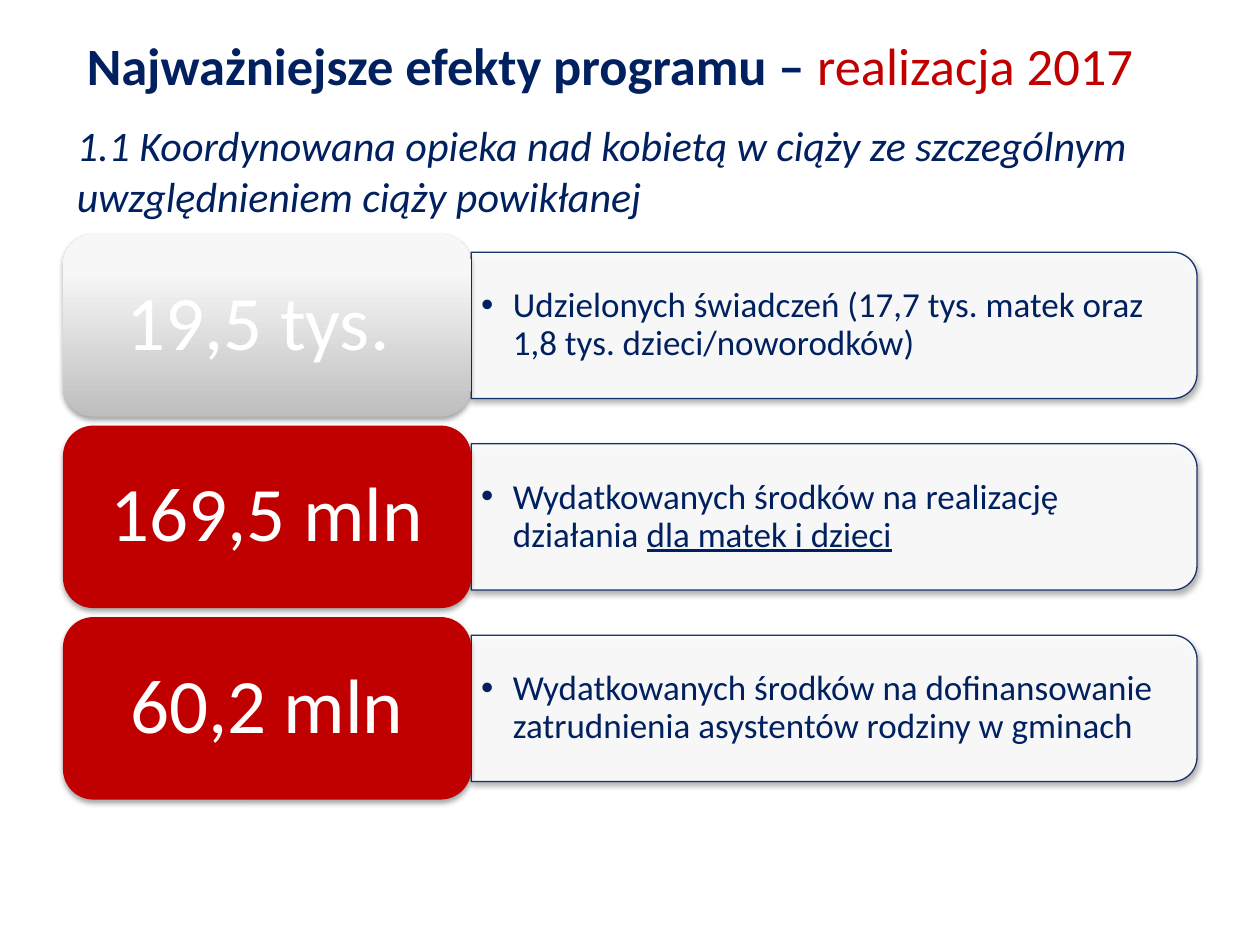
from lxml import etree
from pptx import Presentation
from pptx.dml.color import RGBColor
from pptx.enum.shapes import MSO_SHAPE
from pptx.enum.text import MSO_ANCHOR, PP_ALIGN
from pptx.oxml.ns import qn
from pptx.util import Cm, Pt

ROUND = MSO_SHAPE.ROUNDED_RECTANGLE
HALF_ROUND = MSO_SHAPE.ROUND_2_SAME_RECTANGLE
TOP, MIDDLE = MSO_ANCHOR.TOP, MSO_ANCHOR.MIDDLE
CENTER = PP_ALIGN.CENTER

NAVY = RGBColor(0x00, 0x20, 0x60)
RED = RGBColor(0xC0, 0x00, 0x00)
WHITE = RGBColor(0xFF, 0xFF, 0xFF)
GREY = RGBColor(0xBE, 0xBE, 0xBE)
PALE = RGBColor(0xF7, 0xF7, 0xF7)
FONT = "Calibri"

# Row grid, in cm
LEFT, FIRST, PITCH = 1.27, 4.72, 3.86
BADGE_W, BADGE_H = 8.23, 3.68
PANEL_W, PANEL_H = 14.63, 2.95
NOTE_W, NOTE_H = 14.48, 2.64

# Badge text, badge fill (None is the grey gradient), note runs with underline
ROWS = [
    ("19,5 tys. ", None,
     [("Udzielonych świadczeń (17,7 tys. matek oraz "
       "1,8 tys. dzieci/noworodków)", False)]),
    ("169,5 mln", RED,
     [("Wydatkowanych środków na realizację działania ", False),
      ("dla matek i dzieci", True)]),
    ("60,2 mln", RED,
     [("Wydatkowanych środków na dofinansowanie "
       "zatrudnienia asystentów rodziny w gminach", False)]),
]


def add_run(para, text, size, color, bold=False, italic=False, under=False):
    run = para.add_run()
    run.text = text
    font = run.font
    font.name, font.size = FONT, Pt(size)
    font.bold, font.italic, font.underline = bold, italic, under
    font.color.rgb = color


def set_frame(shape, anchor, side=0.25, edge=0.13):
    frame = shape.text_frame
    frame.word_wrap = True
    frame.vertical_anchor = anchor
    frame.margin_left = frame.margin_right = Cm(side)
    frame.margin_top = frame.margin_bottom = Cm(edge)
    return frame.paragraphs[0]


def add_box(slide, left, top, width, height, anchor, **inset):
    box = slide.shapes.add_textbox(Cm(left), Cm(top), Cm(width), Cm(height))
    return set_frame(box, anchor, **inset)


def add_alpha(color, percent):
    etree.SubElement(color, qn("a:alpha"), val=str(percent * 1000))


def add_shadow(shape):
    shape.shadow.inherit = False
    effects = shape._element.spPr.find(qn("a:effectLst"))
    outer = etree.SubElement(effects, qn("a:outerShdw"), blurRad="40000",
                             dist="23000", dir="5400000", rotWithShape="0")
    add_alpha(etree.SubElement(outer, qn("a:srgbClr"), val="000000"), 35)


def add_panel(slide, mid):
    # A tall shape, turned so that its round corners face right
    left = LEFT + BADGE_W + (PANEL_W - PANEL_H) / 2
    panel = slide.shapes.add_shape(HALF_ROUND, Cm(left), Cm(mid - PANEL_W / 2),
                                   Cm(PANEL_H), Cm(PANEL_W))
    panel.rotation = 90
    panel.fill.solid()
    panel.fill.fore_color.rgb = WHITE
    panel.line.color.rgb = NAVY
    panel.line.width = Pt(0.75)
    for color in panel._element.spPr.iter(qn("a:srgbClr")):
        add_alpha(color, 90)
    add_shadow(panel)


def add_note(slide, mid, runs):
    para = add_box(slide, LEFT + BADGE_W, mid - NOTE_H / 2, NOTE_W, NOTE_H,
                   MIDDLE, side=0.2, edge=0.1)
    props = para._p.get_or_add_pPr()
    props.set("marL", str(Cm(0.64)))
    props.set("indent", str(-Cm(0.64)))
    etree.SubElement(props, qn("a:buFont"), typeface="Arial")
    etree.SubElement(props, qn("a:buChar"), char="•")
    para.line_spacing = 0.9
    for text, under in runs:
        add_run(para, text, 20, NAVY, under=under)


def add_badge(slide, mid, text, color):
    badge = slide.shapes.add_shape(ROUND, Cm(LEFT), Cm(mid - BADGE_H / 2),
                                   Cm(BADGE_W), Cm(BADGE_H))
    if color is None:
        badge.fill.gradient()
        badge.fill.gradient_angle = 90
        stops = badge.fill.gradient_stops
        for stop, place, shade in zip(stops, (0, 0.8), (GREY, PALE)):
            stop.position = place
            stop.color.rgb = shade
    else:
        badge.fill.solid()
        badge.fill.fore_color.rgb = color
    badge.line.fill.background()
    add_shadow(badge)
    para = set_frame(badge, MIDDLE, side=0.4, edge=0.4)
    para.alignment = CENTER
    para.line_spacing = 0.9
    add_run(para, text, 44, WHITE)


def main():
    deck = Presentation()
    deck.slide_width, deck.slide_height = Cm(25.4), Cm(19.05)
    slide = deck.slides.add_slide(deck.slide_layouts[6])

    # Headings
    head = add_box(slide, 1.5, 0.53, 22.2, 1.55, TOP)
    add_run(head, "Najważniejsze efekty programu – ", 30, NAVY, bold=True)
    add_run(head, "realizacja 2017", 30, RED)
    topic = add_box(slide, 1.3, 1.93, 22.86, 3, MIDDLE)
    add_run(topic, "1.1 Koordynowana opieka nad kobietą w ciąży ze "
            "szczególnym uwzględnieniem ciąży powikłanej",
            24, NAVY, italic=True)

    # Result rows
    for index, (text, color, runs) in enumerate(ROWS):
        mid = FIRST + index * PITCH + BADGE_H / 2
        add_panel(slide, mid)
        add_note(slide, mid, runs)
        add_badge(slide, mid, text, color)

    deck.save("out.pptx")


if __name__ == "__main__":
    main()
